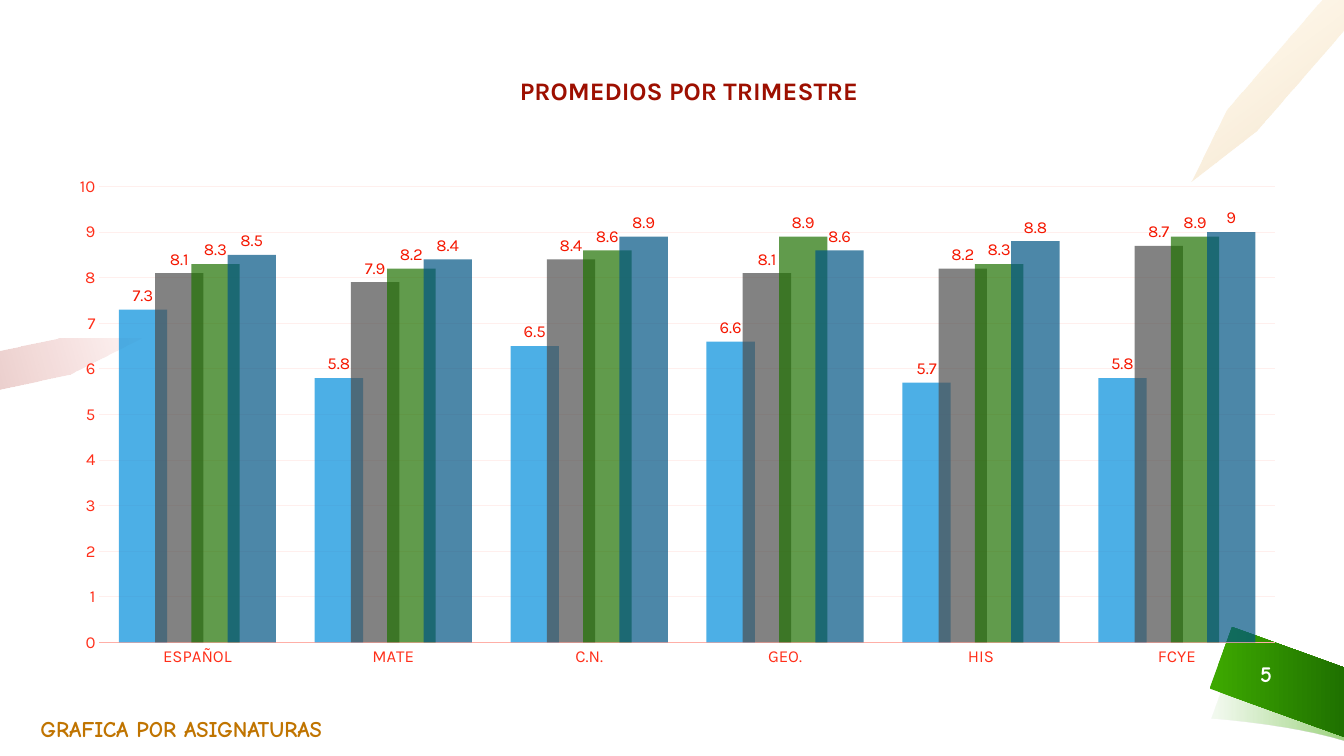
from lxml import etree
from pptx import Presentation
from pptx.chart.data import CategoryChartData
from pptx.dml.color import RGBColor
from pptx.enum.chart import XL_CHART_TYPE, XL_LABEL_POSITION, XL_TICK_MARK
from pptx.enum.text import MSO_ANCHOR, PP_ALIGN
from pptx.oxml import parse_xml
from pptx.oxml.ns import nsdecls, qn
from pptx.util import Pt

COLUMNS = XL_CHART_TYPE.COLUMN_CLUSTERED
OUTSIDE = XL_LABEL_POSITION.OUTSIDE_END
NO_TICK = XL_TICK_MARK.NONE
MIDDLE, TOP = MSO_ANCHOR.MIDDLE, MSO_ANCHOR.TOP
LEFT, CENTER = PP_ALIGN.LEFT, PP_ALIGN.CENTER
BODY_FONT, ACCENT_FONT = "Karla", "Comic Neue"

SUBJECTS = ["ESPAÑOL", "MATE", "C.N.", "GEO.", "HIS", "FCYE"]
SERIES = [
    ("Series 1", [7.3, 5.8, 6.5, 6.6, 5.7, 5.8], "008EDC"),
    ("Series 2", [8.1, 7.9, 8.4, 8.1, 8.2, 8.7], "4D4D4D"),
    ("Series 3", [8.3, 8.2, 8.6, 8.9, 8.3, 8.9], "1F7100"),
    ("Series 4", [8.5, 8.4, 8.9, 8.6, 8.8, 9], "005584"),
]
PLOT_AREA = {"x": 0.031, "y": 0.115, "w": 0.959, "h": 0.824}


def color(value):
    return RGBColor.from_string(value)


def set_font(font, name, size, value, bold=False):
    font.name = name
    font.size = Pt(size)
    font.bold = bold
    font.color.rgb = color(value)


def set_opacity(color_element, percent):
    alpha = etree.SubElement(color_element, qn("a:alpha"))
    alpha.set("val", str(percent * 1000))


def bezier(start, first, second, end, steps=12):
    points = []
    for step in range(steps + 1):
        t = step / steps
        weights = ((1 - t) ** 3, 3 * t * (1 - t) ** 2, 3 * t * t * (1 - t), t ** 3)
        corners = list(zip(start, first, second, end))
        points.append(tuple(sum(w * c for w, c in zip(weights, axis)) for axis in corners))
    return points


def add_gradient_outline(slide, left, top, points, stops, angle):
    scaled = [(Pt(x), Pt(y)) for x, y in points]
    builder = slide.shapes.build_freeform(*scaled[0], scale=1.0)
    builder.add_line_segments(scaled[1:], close=True)
    shape = builder.convert_to_shape(Pt(left), Pt(top))
    shape.shadow.inherit = False
    shape.line.fill.background()
    shape.fill.gradient()
    shape.fill.gradient_angle = (360 - angle) % 360
    for stop, (position, value, _) in zip(shape.fill.gradient_stops, stops):
        stop.position = position
        stop.color.rgb = color(value)
    for element, (_, _, opacity) in zip(shape._element.spPr.iter(qn("a:srgbClr")), stops):
        set_opacity(element, opacity)


def add_page_ribbon(slide, left, top):
    curl = bezier((1.4, 65.6), (1.4, 65.6), (56.2, 69.2), (96, 81.4))
    curl += bezier((96, 33.2), (51.8, 20.9), (17.3, 21.6), (17.3, 21.6))
    add_gradient_outline(slide, left, top, curl,
                         [(0.03, "3DA800", 6), (1, "3DA800", 50)], 0)
    ribbon = [(96, 32.8), (16, 0), (0, 44), (96, 78.5)]
    ribbon[0] = (96, 29)
    add_gradient_outline(slide, left, top, ribbon,
                         [(0.03, "3DA800", 100), (1, "1F7100", 100)], 0)


def add_pencils(slide, width):
    red_pencil = [(100.8, 0), (41.8, 0), (0, 8.6), (0, 36), (50.4, 25.2)]
    add_gradient_outline(slide, 0, 242, red_pencil,
                         [(0, "D30F00", 5), (1, "9D0F00", 20)], 164)
    yellow_pencil = [(93.6, 0), (25.2, 78.5), (0, 129.6), (46.8, 93.6),
                     (109, 22.3), (109, 0)]
    add_gradient_outline(slide, width - 109, 0, yellow_pencil,
                         [(0, "FFAA00", 5), (1, "C07400", 20)], 53)


def add_label(slide, box, text, font_name, size, value, alignment=CENTER,
              anchor=TOP, left_margin=7.2, spacing=1.0):
    shape = slide.shapes.add_textbox(*[Pt(length) for length in box])
    frame = shape.text_frame
    frame.word_wrap = True
    frame.vertical_anchor = anchor
    frame.margin_left = Pt(left_margin)
    frame.text = text
    paragraph = frame.paragraphs[0]
    paragraph.alignment = alignment
    paragraph.line_spacing = spacing
    set_font(paragraph.runs[0].font, font_name, size, value, True)


def set_plot_area(chart):
    sizes = "".join(f'<c:{key} val="{size}"/>' for key, size in PLOT_AREA.items())
    layout = parse_xml(
        f'<c:layout {nsdecls("c")}><c:manualLayout><c:layoutTarget val="inner"/>'
        f'<c:xMode val="edge"/><c:yMode val="edge"/>{sizes}</c:manualLayout></c:layout>')
    plot_area = chart._chartSpace.chart.plotArea
    for old_layout in plot_area.findall(qn("c:layout")):
        plot_area.remove(old_layout)
    plot_area.insert(0, layout)


def style_axes(chart):
    for axis in (chart.category_axis, chart.value_axis):
        axis.major_tick_mark = NO_TICK
        axis.minor_tick_mark = NO_TICK
        set_font(axis.tick_labels.font, BODY_FONT, 12, "FF2F1A")
    category_line = chart.category_axis.format.line
    category_line.color.rgb = color("FFAFA7")
    category_line.width = Pt(1.25)
    value_axis = chart.value_axis
    value_axis.minimum_scale, value_axis.maximum_scale = 0, 10
    value_axis.major_unit = 1
    value_axis.format.line.fill.background()
    grid_line = value_axis.major_gridlines.format.line
    grid_line.color.rgb = color("FFEFED")
    grid_line.width = Pt(0.75)


def add_grades_chart(slide, box):
    data = CategoryChartData()
    data.categories = SUBJECTS
    for name, grades, _ in SERIES:
        data.add_series(name, grades)
    chart = slide.shapes.add_chart(COLUMNS, *[Pt(length) for length in box], data).chart
    chart.has_title = False
    chart.has_legend = False
    set_font(chart.font, BODY_FONT, 10, "9D0F00")
    set_plot_area(chart)
    style_axes(chart)
    plot = chart.plots[0]
    plot.vary_by_categories = False
    plot.gap_width = 80
    plot.overlap = 25
    for series, (_, _, value) in zip(plot.series, SERIES):
        series.invert_if_negative = False
        series.format.fill.solid()
        series.format.fill.fore_color.rgb = color(value)
        set_opacity(next(series._element.iter(qn("a:srgbClr"))), 70)
        labels = series.data_labels
        labels.show_value = True
        labels.position = OUTSIDE
        set_font(labels.font, BODY_FONT, 12, "F51700")


def build_slide(presentation):
    slide = presentation.slides.add_slide(presentation.slide_layouts[6])
    add_page_ribbon(slide, 864, 447.8)
    add_pencils(slide, 960)
    add_label(slide, (28.8, 497.5, 321.8, 42.5), "GRAFICA POR ASIGNATURAS",
              ACCENT_FONT, 16, "C07400", LEFT, MIDDLE, 0, 1.2)
    add_label(slide, (879.1, 468, 50.4, 28.8), "5", ACCENT_FONT, 16, "FFFFFF")
    add_grades_chart(slide, (43.9, 87.8, 875.5, 395.3))
    add_label(slide, (252.7, 50.4, 478.8, 28.8), "PROMEDIOS POR TRIMESTRE",
              BODY_FONT, 18, "9D0F00")


def main():
    presentation = Presentation()
    presentation.slide_width, presentation.slide_height = Pt(960), Pt(540)
    build_slide(presentation)
    presentation.save("out.pptx")


if __name__ == "__main__":
    main()
